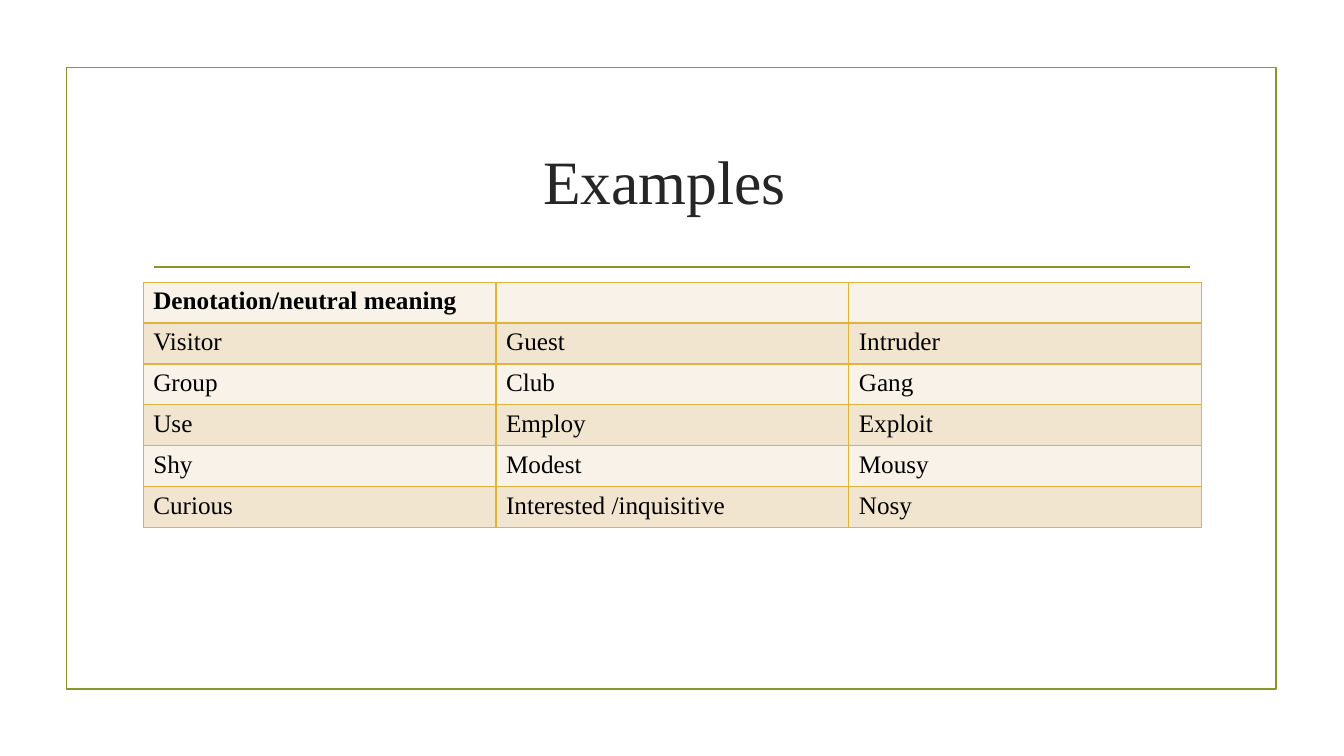
from dataclasses import dataclass

from lxml.etree import SubElement
from pptx import Presentation
from pptx.dml.color import RGBColor
from pptx.enum.shapes import MSO_CONNECTOR, MSO_SHAPE
from pptx.enum.text import MSO_ANCHOR, PP_ALIGN
from pptx.oxml.ns import qn
from pptx.util import Cm, Pt


@dataclass(frozen=True)
class Theme:
    font: str = "Times New Roman"
    title_size: int = 44
    table_size: int = 18
    title_color: str = "262626"
    text_color: str = "000000"
    accent: str = "83992A"
    border: str = "DEB340"
    bands: tuple = ("F9F2E8", "F2E5CF")
    rule_width: float = 1.25
    border_width: float = 1


class SlideBuilder:
    """Adds styled elements to one slide."""

    def __init__(self, slide, theme):
        self.slide = slide
        self.theme = theme

    def format_text(self, paragraph, size, color, bold=False):
        for run in paragraph.runs:
            run.font.name = self.theme.font
            run.font.size = Pt(size)
            run.font.bold = bold
            run.font.color.rgb = RGBColor.from_string(color)

    def format_line(self, line):
        line.color.rgb = RGBColor.from_string(self.theme.accent)
        line.width = Pt(self.theme.rule_width)

    def frame(self, left, top, width, height):
        shape = self.slide.shapes.add_shape(
            MSO_SHAPE.RECTANGLE, Cm(left), Cm(top), Cm(width), Cm(height)
        )
        shape.shadow.inherit = False
        shape.fill.background()
        self.format_line(shape.line)

    def rule(self, left, right, top):
        connector = self.slide.shapes.add_connector(
            MSO_CONNECTOR.STRAIGHT, Cm(left), Cm(top), Cm(right), Cm(top)
        )
        self.format_line(connector.line)
        SubElement(connector._element.spPr, qn("a:effectLst"))

    def title(self, text, left, top, width, height):
        title = self.slide.shapes.title
        title.left, title.top = Cm(left), Cm(top)
        title.width, title.height = Cm(width), Cm(height)
        title.text_frame.text = text
        title.text_frame.vertical_anchor = MSO_ANCHOR.MIDDLE
        paragraph = title.text_frame.paragraphs[0]
        paragraph.alignment = PP_ALIGN.CENTER
        self.format_text(paragraph, self.theme.title_size, self.theme.title_color)

    def cell_borders(self, cell):
        properties = cell._tc.get_or_add_tcPr()
        for side in ("lnL", "lnR", "lnT", "lnB"):
            line = SubElement(
                properties, qn(f"a:{side}"), w=str(Pt(self.theme.border_width))
            )
            fill = SubElement(line, qn("a:solidFill"))
            SubElement(fill, qn("a:srgbClr"), val=self.theme.border)

    def table(self, rows, left, top, width, row_height):
        table = self.slide.shapes.add_table(
            len(rows), len(rows[0]), Cm(left), Cm(top),
            Cm(width), Cm(row_height * len(rows)),
        ).table
        for row_index, row in enumerate(rows):
            band = self.theme.bands[row_index % len(self.theme.bands)]
            for column_index, text in enumerate(row):
                cell = table.cell(row_index, column_index)
                self.cell_borders(cell)
                cell.fill.solid()
                cell.fill.fore_color.rgb = RGBColor.from_string(band)
                cell.text_frame.text = text
                self.format_text(
                    cell.text_frame.paragraphs[0], self.theme.table_size,
                    self.theme.text_color, bold=row_index == 0,
                )


def main():
    presentation = Presentation()
    presentation.slide_width, presentation.slide_height = Cm(33.87), Cm(19.05)
    slide = presentation.slides.add_slide(presentation.slide_layouts[5])
    builder = SlideBuilder(slide, Theme())
    left, width = 3.61, 26.67

    builder.frame(1.68, 1.7, 30.48, 15.67)
    builder.rule(3.89, 30, 6.73)
    builder.title("Examples ", left, 2.72, width, 3.63)
    words = [
        ("Denotation/neutral meaning", "", ""),
        ("Visitor", "Guest", "Intruder"),
        ("Group", "Club", "Gang"),
        ("Use", "Employ", "Exploit"),
        ("Shy", "Modest", "Mousy"),
        ("Curious", "Interested /inquisitive", "Nosy"),
    ]
    builder.table(words, left, 7.11, width, 1.03)
    presentation.save("out.pptx")


if __name__ == "__main__":
    main()
